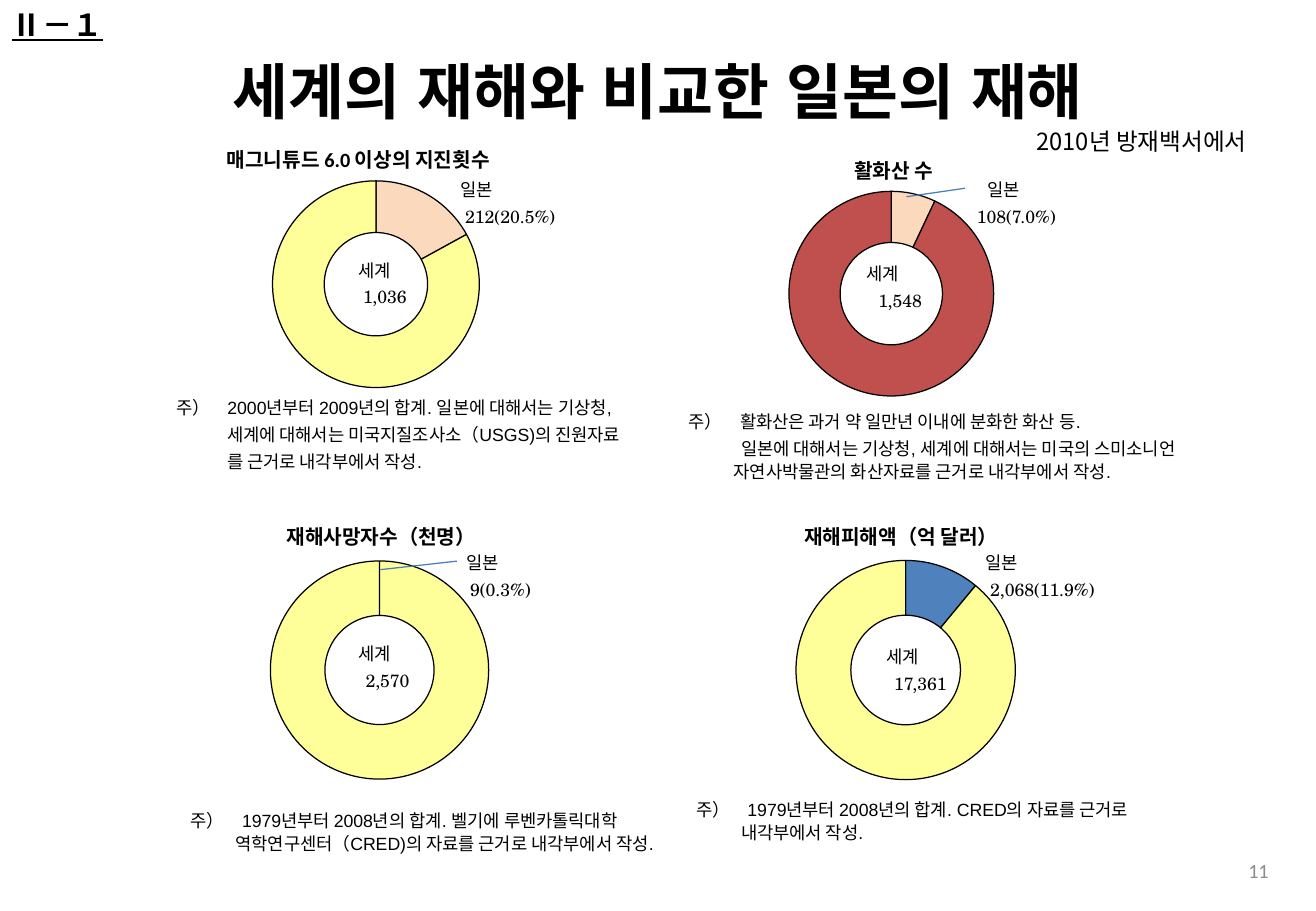
from lxml import etree
from pptx import Presentation
from pptx.chart.data import CategoryChartData
from pptx.dml.color import RGBColor
from pptx.enum.shapes import MSO_CONNECTOR as Connector
from pptx.enum.chart import XL_CHART_TYPE as ChartType
from pptx.enum.text import MSO_ANCHOR as Anchor, PP_ALIGN as Align
from pptx.oxml import parse_xml
from pptx.oxml.ns import nsdecls, qn
from pptx.util import Inches, Pt

THEME = {
    "ink": "000000", "muted": "8C8C8C", "leader": "4B7EBC",
    "peach": "FBD9BD", "yellow": "FFFF99", "red": "C0504D", "blue": "4F81BD",
    "sans": "Arial", "body": "Calibri", "asian": "Noto Sans CJK JP", "serif": "TeX Gyre Schola",
    "title": 36, "tag": 18, "source": 14, "heading": 12, "number": 12, "note": 10.5, "line": 0.75,
}
CELL = Inches(0.1)

deck = Presentation()
deck.slide_width, deck.slide_height = int(108.3 * CELL), 75 * CELL
page = deck.slides.add_slide(deck.slide_layouts[6])


def add_text(area, lines, font, size, color="ink", asian="body", bold=False, underline=False,
             align=Align.LEFT, anchor=Anchor.MIDDLE, line_spacing=None):
    box = page.shapes.add_textbox(*(int(length * CELL) for length in area))
    frame = box.text_frame
    frame.word_wrap = True
    frame.vertical_anchor = anchor
    for index, (text, margin, indent) in enumerate(lines):
        para = frame.paragraphs[0] if index == 0 else frame.add_paragraph()
        para.alignment = align
        para.line_spacing = line_spacing
        para.space_before = Pt(2 if index else 0)
        properties = para._p.get_or_add_pPr()
        properties.set("marL", str(int(margin * CELL)))
        properties.set("indent", str(int(indent * CELL)))
        span = para.add_run()
        span.text = text
        span.font.name = THEME[font]
        span.font.size = Pt(THEME[size])
        span.font.bold = bold
        span.font.underline = underline
        span.font.color.rgb = RGBColor.from_string(THEME[color])
        east = etree.SubElement(span._r.get_or_add_rPr(), qn("a:ea"))
        east.set("typeface", THEME[asian])


def set_layout(parent, position, **shares):
    for old in parent.findall(qn("c:layout")):
        parent.remove(old)
    entries = "".join(f'<c:{key} val="{value}"/>' for key, value in shares.items())
    parent.insert(position, parse_xml(
        f'<c:layout {nsdecls("c")}><c:manualLayout>{entries}</c:manualLayout></c:layout>'))


add_text((82.5, 9.9, 21.1, 3.4), [("2010년 방재백서에서", 0, 0)], "asian", "source",
         asian="asian", align=Align.RIGHT)
add_text((0, 3.1, 108.3, 8.6), [("세계의 재해와 비교한 일본의 재해", 0, 0)], "body", "title",
         asian="sans", bold=True, align=Align.CENTER)
add_text((80.1, 69.7, 25.3, 4), [("11", 0, 0)], "body", "number", color="muted", align=Align.RIGHT)
add_text((0, 0, 35.9, 5.2), [("Ⅱ－１", 0, 0)], "sans", "tag", asian="sans", bold=True,
         underline=True, anchor=Anchor.TOP)

panels = [
    {"heading": "매그니튜드 6.0 이상의 지진횟수", "heading_x": 0.18,
     "chart": (11.7, 9.8, 37, 25.2), "plot": (0.29, 0.2, 0.46, 0.68),
     "values": (17, 83), "colors": ("peach", "yellow"),
     "japan": ("212(20.5%)", 36.1, 12.3, 0.8, 1.2), "world": ("1,036", 27.1, 18.9, 1.4),
     "note_area": (13.5, 31, 40.9, 9.4), "note_indent": 4.2, "rest_indent": 0,
     "note": ["주）　2000년부터 2009년의 합계. 일본에 대해서는 기상청,",
              "세계에 대해서는 미국지질조사소（USGS)의 진원자료",
              "를 근거로 내각부에서 작성."]},
    {"heading": "활화산 수", "heading_x": 0.4,
     "chart": (56.5, 10.7, 33.7, 25.2), "plot": (0.25, 0.2, 0.5, 0.67),
     "values": (7, 93), "colors": ("peach", "red"),
     "japan": ("108(7.0%)", 79.4, 12.3, 0.9, 0), "world": ("1,548", 69.5, 19.2, 0.8),
     "leader": (74.6, 16.2, 79.4, 15.5),
     "note_area": (55.7, 32, 43.3, 9.4), "note_indent": 3.7, "rest_indent": 0.6,
     "note": ["주）　활화산은 과거 약 일만년 이내에 분화한 화산 등.",
              "일본에 대해서는 기상청, 세계에 대해서는 미국의 스미소니언 "
              "자연사박물관의 화산자료를 근거로 내각부에서 작성."]},
    {"heading": "재해사망자수（천명）", "heading_x": 0.3,
     "chart": (13.1, 40.7, 33.9, 26.8), "plot": (0.27, 0.2, 0.53, 0.68),
     "values": (0, 100), "colors": ("peach", "yellow"),
     "japan": ("9(0.3%)", 36.8, 43, 0.6, 0.9), "world": ("2,570", 27.3, 50.5, 1.2),
     "leader": (31.3, 46.9, 37.6, 46.2),
     "note_area": (14.7, 63.7, 39.9, 9.4), "note_indent": 3.7, "rest_indent": 0,
     "note": ["주）　1979년부터 2008년의 합계. 벨기에 루벤카톨릭대학 "
              "역학연구센터（CRED)의 자료를 근거로 내각부에서 작성."]},
    {"heading": "재해피해액（억 달러）", "heading_x": 0.29,
     "chart": (55.6, 40.7, 35.4, 26.8), "plot": (0.28, 0.2, 0.51, 0.68),
     "values": (11, 89), "colors": ("blue", "yellow"),
     "japan": ("2,068(11.9%)", 80.1, 43, 0, 0.4), "world": ("17,361", 70.8, 50.7, 1.2),
     "note_area": (56.3, 62.8, 43.3, 9.4), "note_indent": 3.7, "rest_indent": 0,
     "note": ["주）　1979년부터 2008년의 합계. CRED의 자료를 근거로 내각부에서 작성."]},
]

for panel in panels:
    data = CategoryChartData()
    data.categories = ["1", "2"]
    data.add_series("Series 1", panel["values"])
    area = (int(length * CELL) for length in panel["chart"])
    chart = page.shapes.add_chart(ChartType.DOUGHNUT, *area, data).chart
    chart.has_legend = False
    chart.font.name = THEME["body"]
    chart.font.size = Pt(THEME["tag"])
    chart.font.color.rgb = RGBColor.from_string(THEME["ink"])
    plot = chart.plots[0]
    plot.has_data_labels = False
    for index, color in enumerate(panel["colors"]):
        ring = plot.series[0].points[index].format
        ring.fill.solid()
        ring.fill.fore_color.rgb = RGBColor.from_string(THEME[color])
        ring.line.color.rgb = RGBColor.from_string(THEME["ink"])
        ring.line.width = Pt(THEME["line"])

    chart.has_title = True
    span = chart.chart_title.text_frame.paragraphs[0].add_run()
    span.text = panel["heading"]
    span.font.name = THEME["body"]
    span.font.size = Pt(THEME["heading"])
    span.font.bold = True
    span.font.color.rgb = RGBColor.from_string(THEME["ink"])
    set_layout(chart.chart_title._element, 1, xMode="edge", yMode="edge",
               x=panel["heading_x"], y=0.06)
    x, y, width, height = panel["plot"]
    set_layout(plot._element.getparent(), 0, layoutTarget="inner", xMode="edge", yMode="edge",
               x=x, y=y, w=width, h=height)

for panel in panels:
    first, *rest = panel["note"]
    indent = panel["note_indent"]
    note = [(first, indent, -indent)] + [(text, indent, panel["rest_indent"]) for text in rest]
    add_text(panel["note_area"], note, "sans", "note", line_spacing=1.1)

    count, left, top, name_margin, count_margin = panel["japan"]
    add_text((left, top, 19.7, 8.7), [("일본", name_margin, 0), (count, count_margin, 0)],
             "serif", "note", line_spacing=1.1)
    total, left, top, name_margin = panel["world"]
    add_text((left, top, 19.7, 8.7), [("세계", name_margin, 0), (total, 1.8, 0)],
             "serif", "note", line_spacing=1.1)

    if "leader" in panel:
        ends = (int(length * CELL) for length in panel["leader"])
        leader = page.shapes.add_connector(Connector.STRAIGHT, *ends)
        leader.line.color.rgb = RGBColor.from_string(THEME["leader"])
        leader.line.width = Pt(THEME["line"])
        etree.SubElement(leader._element.spPr, qn("a:effectLst"))

deck.save("out.pptx")
